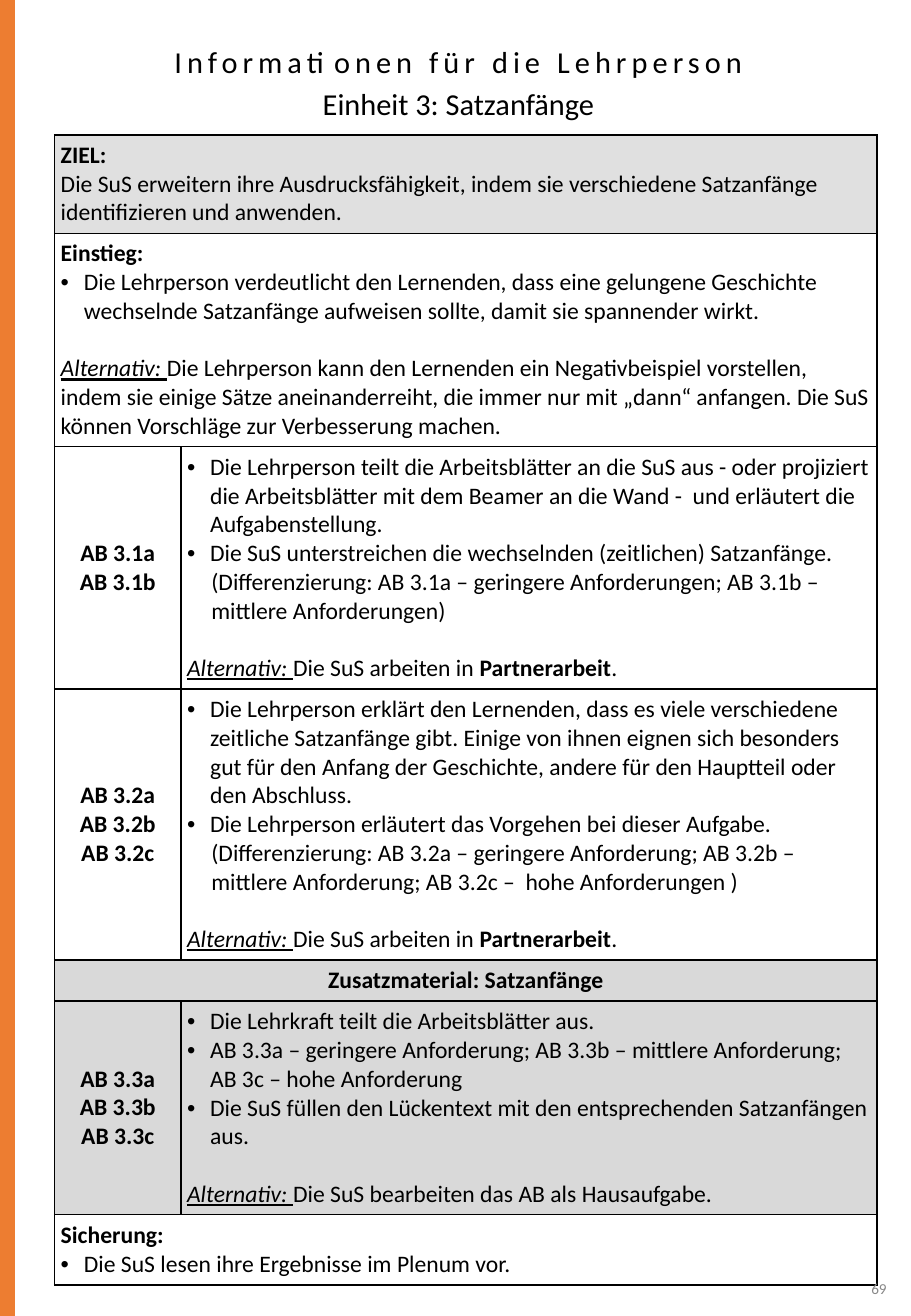
from dataclasses import dataclass
from lxml.etree import SubElement
from pptx import Presentation
from pptx.dml.color import RGBColor
from pptx.enum.shapes import MSO_CONNECTOR as Connector
from pptx.enum.text import MSO_ANCHOR as Anchor, PP_ALIGN as Align
from pptx.oxml.ns import qn
from pptx.util import Inches, Pt


@dataclass(frozen=True)
class Theme:
    font: str = "Calibri"
    black: str = "000000"
    grey: str = "888888"
    orange: str = "ED7D31"
    white: str = "FFFFFF"
    goal_fill: str = "E0E0E0"
    extra_fill: str = "D9D9D9"
    title_size: int = 18
    body_size: int = 14
    number_size: int = 9
    band_width: int = 10
    border_width: int = 1
    inset: float = 0.05
    indent: float = 0.19


THEME = Theme()


@dataclass(frozen=True)
class Line:
    text: str
    kind: str = "plain"
    bold_end: str = ""


def heading(text):
    return Line(text, "heading")


def bullet(text):
    return Line(text, "bullet")


def note(text):
    return Line(text, "note")


def alternative(text, bold_end=""):
    return Line(text, "alternative", bold_end)


def sheets(*names):
    return [Line(name, "label") for name in names]


PARTNER = alternative("Die SuS arbeiten in ", "Partnerarbeit")

ROWS = [
    (0.81, THEME.goal_fill, [[
        heading("ZIEL:"),
        Line("Die SuS erweitern ihre Ausdrucksfähigkeit, indem sie verschiedene Satzanfänge identifizieren und anwenden."),
    ]]),
    (1.75, THEME.white, [[
        heading("Einstieg:"),
        bullet("Die Lehrperson verdeutlicht den Lernenden, dass eine gelungene Geschichte wechselnde Satzanfänge aufweisen sollte, damit sie spannender wirkt."),
        alternative("Die Lehrperson kann den Lernenden ein Negativbeispiel vorstellen, indem sie einige Sätze aneinanderreiht, die immer nur mit „dann“ anfangen. Die SuS können Vorschläge zur Verbesserung machen."),
    ]]),
    (1.99, THEME.white, [sheets("AB 3.1a", "AB 3.1b"), [
        bullet("Die Lehrperson teilt die Arbeitsblätter an die SuS aus - oder projiziert die Arbeitsblätter mit dem Beamer an die Wand -  und erläutert die Aufgabenstellung."),
        bullet("Die SuS unterstreichen die wechselnden (zeitlichen) Satzanfänge."),
        note("(Differenzierung: AB 3.1a – geringere Anforderungen; AB 3.1b – mittlere Anforderungen)"),
        PARTNER,
    ]]),
    (2.23, THEME.white, [sheets("AB 3.2a", "AB 3.2b", "AB 3.2c"), [
        bullet("Die Lehrperson erklärt den Lernenden, dass es viele verschiedene zeitliche Satzanfänge gibt. Einige von ihnen eignen sich besonders gut für den Anfang der Geschichte, andere für den Hauptteil oder den Abschluss."),
        bullet("Die Lehrperson erläutert das Vorgehen bei dieser Aufgabe."),
        note("(Differenzierung: AB 3.2a – geringere Anforderung; AB 3.2b – mittlere Anforderung; AB 3.2c –  hohe Anforderungen )"),
        PARTNER,
    ]]),
    (0.34, THEME.extra_fill, [sheets("Zusatzmaterial: Satzanfänge")]),
    (1.75, THEME.extra_fill, [sheets("AB 3.3a", "AB 3.3b", "AB 3.3c"), [
        bullet("Die Lehrkraft teilt die Arbeitsblätter aus."),
        bullet("AB 3.3a – geringere Anforderung; AB 3.3b – mittlere Anforderung; AB 3c – hohe Anforderung"),
        bullet("Die SuS füllen den Lückentext mit den entsprechenden Satzanfängen aus."),
        alternative("Die SuS bearbeiten das AB als Hausaufgabe."),
    ]]),
    (0.58, THEME.white, [[
        heading("Sicherung:"),
        bullet("Die SuS lesen ihre Ergebnisse im Plenum vor."),
    ]]),
]


def style_span(span, size, color=THEME.black, bold=False, accent=False):
    font = span.font
    font.name, font.size, font.bold = THEME.font, Pt(size), bold
    font.italic = font.underline = accent
    font.color.rgb = RGBColor.from_string(color)


def set_insets(holder):
    holder.margin_left = holder.margin_right = Inches(THEME.inset)
    holder.margin_top = holder.margin_bottom = Inches(THEME.inset)


def write_line(para, line):
    properties = para._p.get_or_add_pPr()
    para.alignment = Align.CENTER if line.kind == "label" else Align.LEFT
    if line.kind == "bullet":
        properties.set("marL", str(Inches(THEME.indent)))
        properties.set("indent", str(-Inches(THEME.indent)))
        SubElement(properties, qn("a:buFont"), typeface="Arial")
        SubElement(properties, qn("a:buChar"), char="•")
    elif line.kind == "note":
        properties.set("marL", str(Inches(0.2)))
    pieces = [(line.text, line.kind in ("heading", "label"), False)]
    if line.kind == "alternative":
        para.space_before = Pt(17)
        pieces.insert(0, ("Alternativ: ", False, True))
    if line.bold_end:
        pieces += [(line.bold_end, True, False), (".", False, False)]
    for text, bold, accent in pieces:
        span = para.add_run()
        span.text = text
        style_span(span, THEME.body_size, bold=bold, accent=accent)


def fill_cell(cell, lines):
    set_insets(cell)
    cell.vertical_anchor = Anchor.MIDDLE
    frame = cell.text_frame
    for index, line in enumerate(lines):
        write_line(frame.add_paragraph() if index else frame.paragraphs[0], line)


def style_cell(cell, color):
    properties = cell._tc.get_or_add_tcPr()
    for side in ("lnL", "lnR", "lnT", "lnB"):
        border = SubElement(properties, qn(f"a:{side}"), w=str(Pt(THEME.border_width)))
        SubElement(SubElement(border, qn("a:solidFill")), qn("a:srgbClr"), val=THEME.black)
    cell.fill.solid()
    cell.fill.fore_color.rgb = RGBColor.from_string(color)


def add_plan(page, left, top, width, label_width):
    height = sum(row[0] for row in ROWS)
    table = page.shapes.add_table(
        len(ROWS), 2, Inches(left), Inches(top), Inches(width), Inches(height)).table
    table.first_row = table.horz_banding = False
    table.columns[0].width = Inches(label_width)
    table.columns[1].width = Inches(width - label_width)
    for index, (row_height, color, contents) in enumerate(ROWS):
        table.rows[index].height = Inches(row_height)
        cells = [table.cell(index, column) for column in range(2)]
        for cell in cells:
            style_cell(cell, color)
        if len(contents) == 1:
            cells[0].merge(cells[1])
        for cell, lines in zip(cells, contents):
            fill_cell(cell, lines)


def add_text(page, left, top, width, height, text, size, align,
             color=THEME.black, spacing=0, wrap=True):
    box = page.shapes.add_textbox(Inches(left), Inches(top), Inches(width), Inches(height))
    frame = box.text_frame
    set_insets(frame)
    frame.word_wrap = wrap
    frame.text = text
    para = frame.paragraphs[0]
    para.alignment = align
    span = para.runs[0]
    style_span(span, size, color)
    if spacing:
        span._r.get_or_add_rPr().set("spc", str(spacing * 100))


def add_titles(page, left, top, width):
    add_text(page, left, top, width, 0.4, "Informationen für die Lehrperson",
             THEME.title_size, Align.CENTER, spacing=3)
    add_text(page, left, top + 0.34, width, 0.4, "Einheit 3: Satzanfänge",
             THEME.title_size, Align.CENTER)


def add_side_band(page, left, height):
    band = page.shapes.add_connector(
        Connector.STRAIGHT, Inches(left), 0, Inches(left), height)
    band.line.color.rgb = RGBColor.from_string(THEME.orange)
    band.line.width = Pt(THEME.band_width)
    SubElement(band._element.spPr, qn("a:effectLst"))


def main():
    deck = Presentation()
    deck.slide_width, deck.slide_height = Inches(7.5), Inches(10.83)
    page = deck.slides.add_slide(deck.slide_layouts[6])
    add_plan(page, 0.45, 1.11, 6.77, 1.04)
    add_titles(page, 0.17, 0.31, 7.21)
    add_text(page, 7.11, 10.48, 0.24, 0.25, "69", THEME.number_size,
             Align.RIGHT, THEME.grey, wrap=False)
    add_side_band(page, 0.05, deck.slide_height)
    deck.save("out.pptx")


if __name__ == "__main__":
    main()
